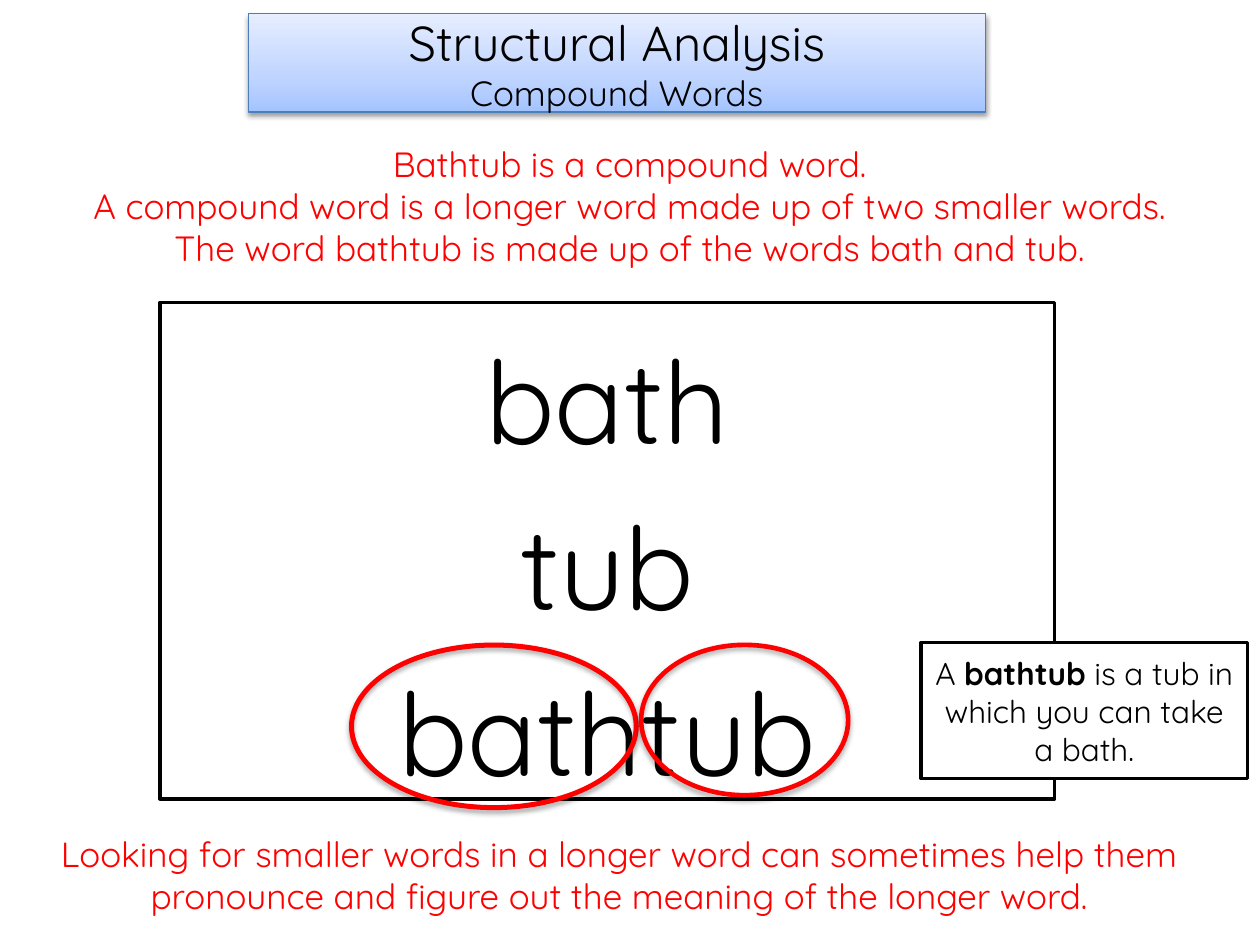
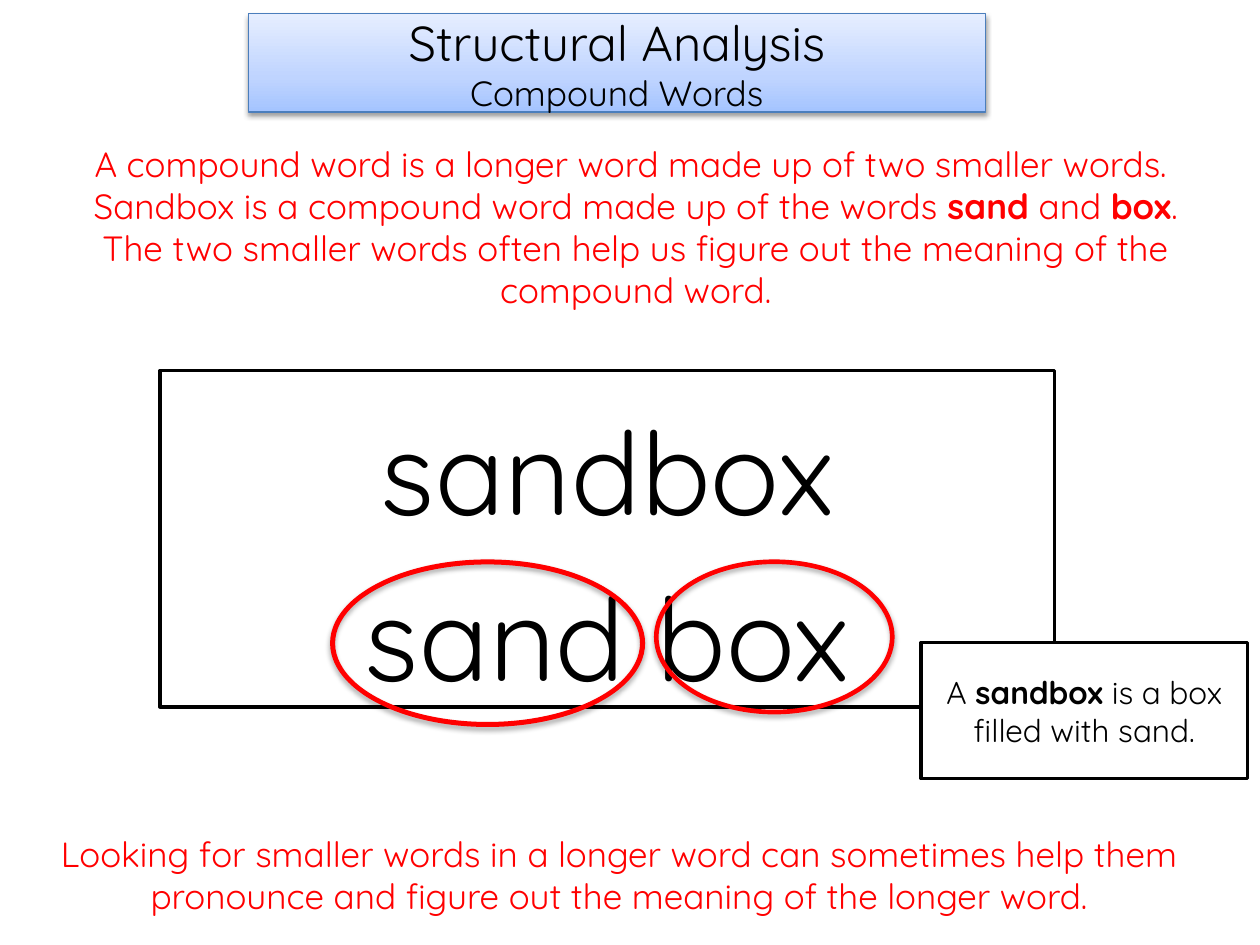
from copy import deepcopy
from dataclasses import dataclass
from typing import NamedTuple

from lxml import etree
from pptx import Presentation
from pptx.dml.color import RGBColor
from pptx.enum.shapes import MSO_SHAPE
from pptx.enum.text import MSO_ANCHOR, MSO_AUTO_SIZE, PP_ALIGN
from pptx.oxml.ns import qn
from pptx.util import Inches, Pt

RECT, DONUT = MSO_SHAPE.RECTANGLE, MSO_SHAPE.DONUT
CENTER, MIDDLE = PP_ALIGN.CENTER, MSO_ANCHOR.MIDDLE
GROW = MSO_AUTO_SIZE.SHAPE_TO_FIT_TEXT
COLS, ROWS, CELL = 100, 75, Inches(0.1)


@dataclass(frozen=True)
class Theme:
    font: str = "Quicksand"
    ink: str = "000000"
    paper: str = "FFFFFF"
    accent: str = "FF0000"
    edge: str = "4B7EBC"
    band: tuple = ((0, "A4C4FF"), (0.35, "BFD4FF"), (1, "E6EEFF"))
    title: int = 28
    body: int = 20
    note: int = 18
    word: int = 66


class Box(NamedTuple):
    """Left, top, width and height in grid columns and rows."""
    x: float
    y: float
    w: float
    h: float

    def emu(self):
        return [round(n * CELL) for n in self]


THEME = Theme()
TITLE = Box(19.7, 1.1, 58.5, 7.8)
CLOSE = Box(2.6, 65.6, 93.1, 7.7)
NOTE = Box(73.1, 51, 25.9, 10.8)
RING_TALL = (13.3, 12.3)
CLOSING = ("Looking for smaller words in a longer word can sometimes help them "
           "pronounce and figure out the meaning of the longer word.")

# "rings" holds the offset from the panel's left side and the width of each;
# "rise" is how far the rings start above the panel's lower side.
LESSONS = [
    {
        "intro": ["Bathtub is a compound word. ",
                  "A compound word is a longer word made up of two smaller words. ",
                  "The word bathtub is made up of the words bath and tub. "],
        "intro_box": Box(3.8, 10.8, 93.1, 11.1),
        "panel": Box(12.7, 24, 71, 39.4),
        "words": ["bath", "tub", "bathtub"],
        "rings": [(15, 23), (38, 16.8)],
        "rise": 12.4,
        "note": "A **bathtub** is a tub in which you can take a bath.",
    },
    {
        "intro": ["A compound word is a longer word made up of two smaller words. ",
                  "Sandbox is a compound word made up of the words "
                  "**sand** and **box**.",
                  "The two smaller words often help us figure out the meaning "
                  "of the compound word."],
        "intro_box": Box(2.6, 10.8, 95.7, 14.5),
        "panel": Box(12.7, 29.4, 71, 26.7),
        "words": ["sandbox", "sand box"],
        "rings": [(13.5, 25), (39.2, 19.1)],
        "rise": 11.7,
        "note": "A **sandbox **is a box filled with sand.",
    },
]


def rgb(code):
    return RGBColor.from_string(code)


def write(shape, lines, sizes, color, gap=None):
    """Fill a shape with centred lines; text between ** marks is bold."""
    frame = shape.text_frame
    frame.word_wrap = True
    for i, (line, size) in enumerate(zip(lines, sizes)):
        para = frame.paragraphs[0] if i == 0 else frame.add_paragraph()
        para.alignment = CENTER
        para.line_spacing = gap
        for k, part in enumerate(line.split("**")):
            if part:
                run = para.add_run()
                run.text = part
                run.font.name = THEME.font
                run.font.size = Pt(size)
                run.font.bold = k % 2 == 1
                run.font.color.rgb = rgb(color)


def draw(slide, kind, box, fill=None, line=None, width=0):
    shape = slide.shapes.add_shape(kind, *box.emu())
    shape.shadow.inherit = False
    if fill:
        shape.fill.solid()
        shape.fill.fore_color.rgb = rgb(fill)
    if line:
        shape.line.color.rgb = rgb(line)
        shape.line.width = Pt(width)
    else:
        shape.line.fill.background()
    shape.text_frame.vertical_anchor = MIDDLE
    return shape


def shade(shape, dist, alpha):
    """Add a soft shadow that falls straight down."""
    effects = shape.element.spPr.find(qn("a:effectLst"))
    outer = etree.SubElement(effects, qn("a:outerShdw"), blurRad=str(Pt(3.1)),
                             dist=str(Pt(dist)), dir="5400000", rotWithShape="0")
    color = etree.SubElement(outer, qn("a:srgbClr"), val=THEME.ink)
    etree.SubElement(color, qn("a:alpha"), val=str(alpha * 1000))


def add_title(slide, box):
    band = draw(slide, RECT, box, line=THEME.edge, width=0.75)
    band.fill.gradient()
    band.fill.gradient_angle = 90
    stops = band.element.spPr.find(".//" + qn("a:gsLst"))
    stops.append(deepcopy(stops[0]))
    for stop, (place, code) in zip(band.fill.gradient_stops, THEME.band):
        stop.position = place
        stop.color.rgb = rgb(code)
    shade(band, 1.6, 38)
    write(band, ["Structural Analysis", "Compound Words"],
          [THEME.title, THEME.body], THEME.ink)


def add_text(slide, box, lines):
    area = slide.shapes.add_textbox(*box.emu())
    write(area, lines, [THEME.body] * len(lines), THEME.accent)
    area.text_frame.auto_size = GROW


def add_frame(slide, box, lines, size, gap=None):
    frame = draw(slide, RECT, box, THEME.paper, THEME.ink, 2)
    write(frame, lines, [size] * len(lines), THEME.ink, gap)


def add_rings(slide, panel, rings, rise):
    """Circle the two parts of the panel's last word."""
    top = panel.y + panel.h - rise
    for (left, wide), tall in zip(rings, RING_TALL):
        ring = draw(slide, DONUT, Box(panel.x + left, top, wide, tall), THEME.accent)
        ring.adjustments[0] = 0.03
        shade(ring, 1.8, 35)


def add_lesson(deck, lesson):
    slide = deck.slides.add_slide(deck.slide_layouts[6])
    panel = lesson["panel"]
    add_title(slide, TITLE)
    add_frame(slide, panel, lesson["words"], THEME.word, 1.2)
    add_text(slide, lesson["intro_box"], lesson["intro"])
    add_text(slide, CLOSE, [CLOSING])
    add_frame(slide, NOTE, [lesson["note"]], THEME.note)
    add_rings(slide, panel, lesson["rings"], lesson["rise"])


def main():
    deck = Presentation()
    deck.slide_width, deck.slide_height = COLS * CELL, ROWS * CELL
    for lesson in LESSONS:
        add_lesson(deck, lesson)
    deck.save("out.pptx")


if __name__ == "__main__":
    main()
